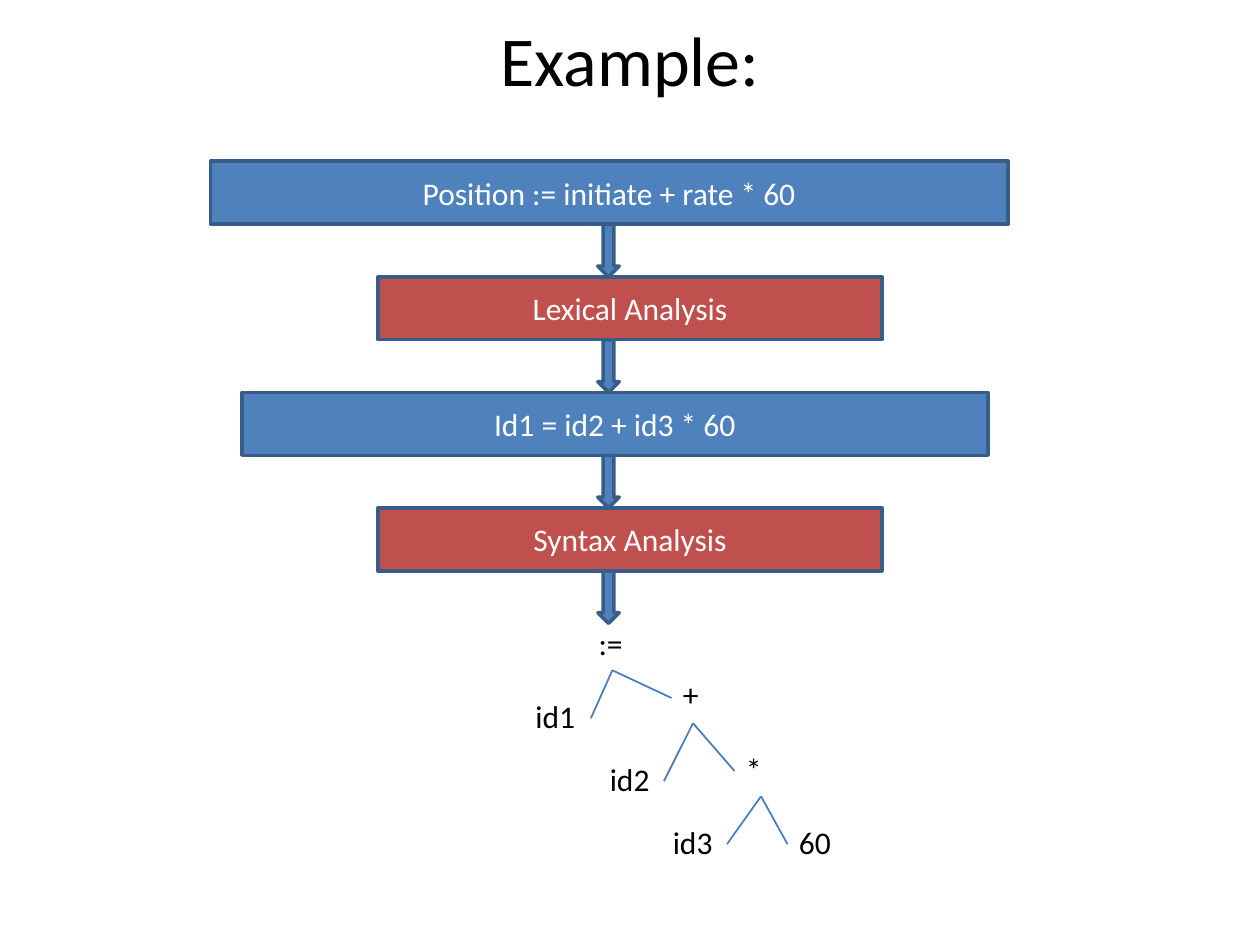
import pptx
import pptx.util
import pptx.dml.color
import pptx.enum.shapes
import pptx.enum.text
import pptx.oxml.ns
import lxml.etree

Inches = pptx.util.Inches
Pt = pptx.util.Pt
MSO_SHAPE = pptx.enum.shapes.MSO_SHAPE
PP_ALIGN = pptx.enum.text.PP_ALIGN
MSO_ANCHOR = pptx.enum.text.MSO_ANCHOR

COLORS = {
    "data": "4F81BC",
    "phase": "C0504D",
    "outline": "385D89",
    "branch": "497DBA",
    "light": "FFFFFF",
    "dark": "000000",
}

# Compiler stages: text, fill, left, width
STAGES = [
    ("Position := initiate + rate * 60", "data", 1.67, 6.33),
    ("Lexical Analysis", "phase", 3, 4),
    ("Id1 = id2 + id3 * 60", "data", 1.92, 5.92),
    ("Syntax Analysis", "phase", 3, 4),
]
STAGE_TOP, STAGE_HEIGHT, STAGE_PITCH = 1.28, 0.5, 0.917
ARROW_CENTER, ARROW_WIDTH = 4.83, 0.17
ARROW_HEIGHT = STAGE_PITCH - STAGE_HEIGHT

# Syntax tree: text, left, top, width
NODES = [
    (":=", 4.75, 4.94, 0.22),
    ("id1", 4.25, 5.52, 0.34),
    ("+", 5.42, 5.35, 0.15),
    ("id2", 4.84, 6.02, 0.34),
    ("*", 5.92, 5.94, 0.15),
    ("id3", 5.34, 6.52, 0.34),
    ("60", 6.34, 6.52, 0.28),
]
NODE_HEIGHT = 0.33

# Parent point and the two child points below it
BRANCHES = [
    ((4.86, 5.32), [(4.69, 5.7), (5.33, 5.54)]),
    ((5.5, 5.74), [(5.27, 6.2), (5.83, 6.12)]),
    ((6.04, 6.32), [(5.77, 6.7), (6.25, 6.7)]),
]


def rgb(name):
    return pptx.dml.color.RGBColor.from_string(COLORS[name])


def write_text(shape, text, size=18, color="dark", align=PP_ALIGN.LEFT,
               anchor=MSO_ANCHOR.TOP, wrap=True, top_inset=0):
    frame = shape.text_frame
    frame.word_wrap = wrap
    frame.vertical_anchor = anchor
    frame.margin_left = frame.margin_right = frame.margin_bottom = 0
    frame.margin_top = Inches(top_inset)
    paragraph = frame.paragraphs[0]
    paragraph.alignment = align
    run = paragraph.add_run()
    run.text = text
    run.font.size = Pt(size)
    run.font.name = "Calibri"
    run.font.color.rgb = rgb(color)


def add_block(slide, preset, fill, left, top, width, height):
    shape = slide.shapes.add_shape(
        preset, Inches(left), Inches(top), Inches(width), Inches(height))
    shape.shadow.inherit = False
    shape.fill.solid()
    shape.fill.fore_color.rgb = rgb(fill)
    shape.line.color.rgb = rgb("outline")
    shape.line.width = Pt(2)
    return shape


def add_branch(slide, start, end):
    connector = slide.shapes.add_connector(
        pptx.enum.shapes.MSO_CONNECTOR.STRAIGHT,
        *(Inches(value) for value in start + end))
    connector.line.color.rgb = rgb("branch")
    connector.line.width = Pt(1)
    lxml.etree.SubElement(connector._element.spPr, pptx.oxml.ns.qn("a:effectLst"))


def main():
    presentation = pptx.Presentation()
    presentation.slide_width = Inches(10)
    presentation.slide_height = Inches(7.5)
    slide = presentation.slides.add_slide(presentation.slide_layouts[5])

    # Title
    title = slide.shapes.title
    title.left, title.top = Inches(3.96), Inches(0.12)
    title.width, title.height = Inches(2.08), Inches(0.69)
    write_text(title, "Example:", size=40, align=PP_ALIGN.CENTER,
               wrap=False, top_inset=0.01)

    # Stage boxes
    tops = [STAGE_TOP + index * STAGE_PITCH for index in range(len(STAGES))]
    for (text, fill, left, width), top in zip(STAGES, tops):
        box = add_block(slide, MSO_SHAPE.RECTANGLE, fill, left, top, width, STAGE_HEIGHT)
        write_text(box, text, color="light", align=PP_ALIGN.CENTER,
                   anchor=MSO_ANCHOR.MIDDLE)

    # An arrow below each stage
    for top in tops:
        add_block(slide, MSO_SHAPE.DOWN_ARROW, "data", ARROW_CENTER - ARROW_WIDTH / 2,
                  top + STAGE_HEIGHT, ARROW_WIDTH, ARROW_HEIGHT)

    # Syntax tree
    for text, left, top, width in NODES:
        label = slide.shapes.add_textbox(
            Inches(left), Inches(top), Inches(width), Inches(NODE_HEIGHT))
        write_text(label, text, wrap=False, top_inset=0.01)
    for parent, children in BRANCHES:
        for child in children:
            add_branch(slide, parent, child)

    presentation.save("out.pptx")


if __name__ == "__main__":
    main()
